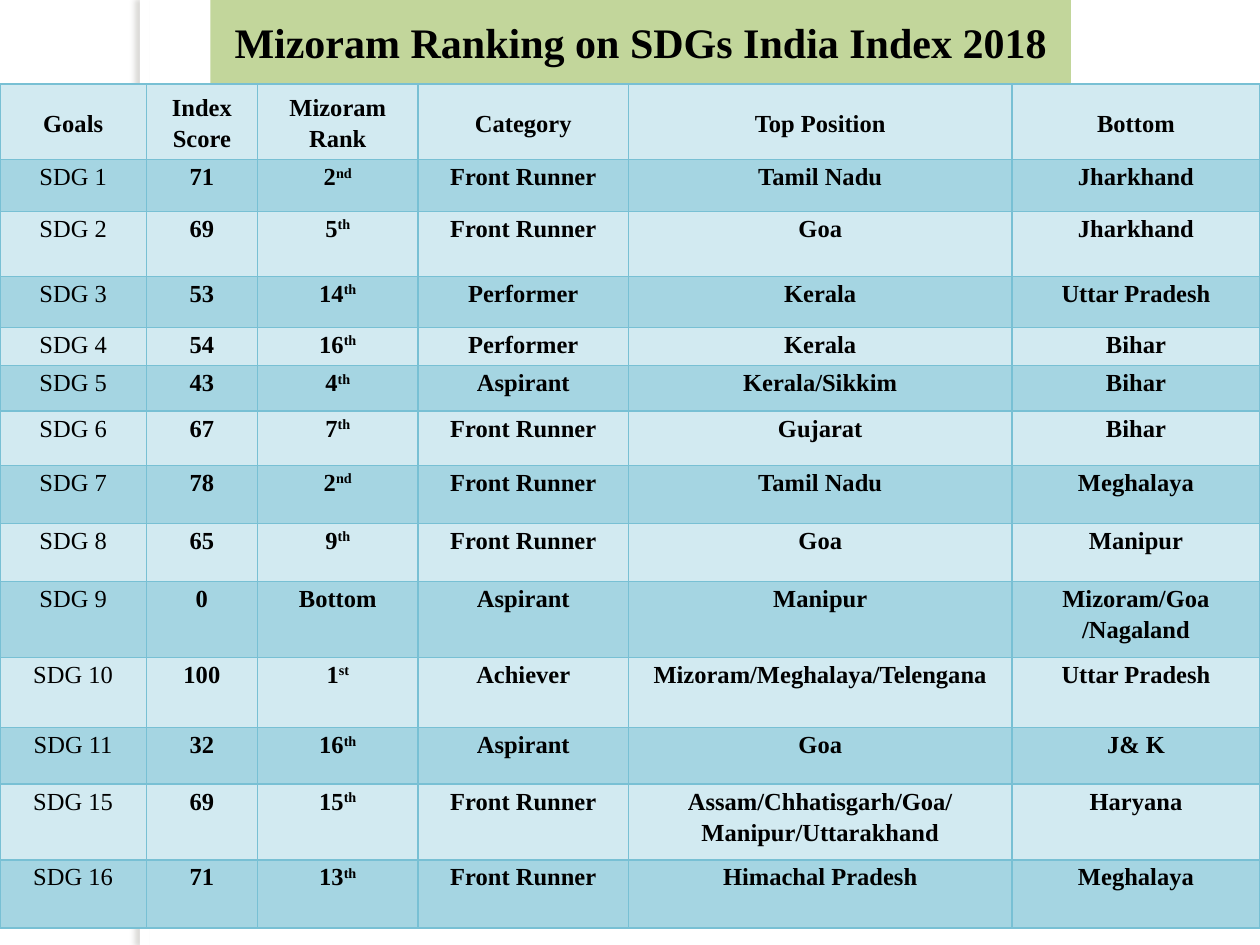
from lxml.etree import SubElement
from pptx import Presentation
from pptx.dml.color import RGBColor
from pptx.enum.shapes import MSO_SHAPE as Shape
from pptx.enum.text import MSO_ANCHOR as Anchor, MSO_AUTO_SIZE as AutoSize, PP_ALIGN as Align
from pptx.oxml import parse_xml
from pptx.oxml.ns import nsdecls, qn
from pptx.util import Cm, Pt

# Content: "^" marks the start of a superscript
TITLE = "Mizoram Ranking on SDGs India Index 2018"
HEADER = ("Goals", "Index Score", "Mizoram Rank", "Category", "Top Position", "Bottom")
GOALS = [
    ("SDG 1", "71", "2^nd", "Front Runner", "Tamil Nadu", "Jharkhand"),
    ("SDG 2", "69", "5^th", "Front Runner", "Goa", "Jharkhand"),
    ("SDG 3", "53", "14^th", "Performer", "Kerala", "Uttar Pradesh"),
    ("SDG 4", "54", "16^th", "Performer", "Kerala", "Bihar"),
    ("SDG 5", "43", "4^th", "Aspirant", "Kerala/Sikkim", "Bihar"),
    ("SDG 6", "67", "7^th", "Front Runner", "Gujarat", "Bihar"),
    ("SDG 7", "78", "2^nd", "Front Runner", "Tamil Nadu", "Meghalaya"),
    ("SDG 8", "65", "9^th", "Front Runner", "Goa", "Manipur"),
    ("SDG 9", "0", "Bottom", "Aspirant", "Manipur", "Mizoram/Goa /Nagaland"),
    ("SDG 10", "100", "1^st", "Achiever", "Mizoram/Meghalaya/Telengana", "Uttar Pradesh"),
    ("SDG 11", "32", "16^th", "Aspirant", "Goa", "J& K"),
    ("SDG 15", "69", "15^th", "Front Runner", "Assam/Chhatisgarh/Goa/Manipur/Uttarakhand", "Haryana"),
    ("SDG 16", "71", "13^th", "Front Runner", "Himachal Pradesh", "Meghalaya"),
]
ROWS = [HEADER] + GOALS

# Sizes in centimetres
COLUMN_WIDTHS = (2.95, 2.24, 3.24, 4.24, 7.73, 5.0)
ROW_HEIGHTS = (1.53, 1.04, 1.31, 1.03, 0.77, 0.92, 1.09, 1.17, 1.17, 1.53, 1.42, 1.14, 1.53, 1.37)
SIDE_MARGIN = Cm(0.18)

FONT = "Times New Roman"
BLACK = RGBColor(0x00, 0x00, 0x00)
WHITE = RGBColor(0xFF, 0xFF, 0xFF)
GREEN = RGBColor(0xC2, 0xD6, 0x9B)
BANDS = (RGBColor(0xD2, 0xEA, 0xF1), RGBColor(0xA5, 0xD5, 0xE2))
BORDER = RGBColor(0x78, 0xC0, 0xD4)
SHADOW = RGBColor(0x73, 0x6F, 0x63)


def format_span(span, size, bold=True):
    span.font.name = FONT
    span.font.size = Pt(size)
    span.font.bold = bold
    span.font.color.rgb = BLACK


def add_borders(cell):
    properties = cell._tc.get_or_add_tcPr()
    for position, side in enumerate(("lnL", "lnR", "lnT", "lnB")):
        line = parse_xml(
            f'<a:{side} {nsdecls("a")} w="{Pt(1)}"><a:solidFill>'
            f'<a:srgbClr val="{BORDER}"/></a:solidFill></a:{side}>')
        properties.insert(position, line)


def fill_cell(cell, text, row, column):
    cell.fill.solid()
    cell.fill.fore_color.rgb = BANDS[row % 2]
    add_borders(cell)
    cell.margin_left = cell.margin_right = SIDE_MARGIN
    cell.margin_top = cell.margin_bottom = 0
    cell.vertical_anchor = Anchor.MIDDLE if row == 0 else Anchor.TOP
    para = cell.text_frame.paragraphs[0]
    para.alignment = Align.CENTER
    para.line_spacing = 1.15
    base, _, suffix = text.partition("^")
    for part in filter(None, (base, suffix)):
        span = para.add_run()
        span.text = part
        format_span(span, 14, bold=row == 0 or column > 0)
    if suffix:
        span.font._element.set("baseline", "30000")


def add_strip(page):
    strip = page.shapes.add_shape(Shape.RECTANGLE, Cm(2.82), 0, Cm(0.2), Cm(19.05))
    strip.fill.solid()
    strip.fill.fore_color.rgb = WHITE
    strip.line.fill.background()
    strip.shadow.inherit = False
    effects = strip._element.spPr.find(qn("a:effectLst"))
    shadow = SubElement(effects, qn("a:outerShdw"), blurRad=str(Pt(3)), dist=str(Pt(3)),
                        dir=str(180 * 60000), algn="tl", rotWithShape="0")
    color = SubElement(shadow, qn("a:srgbClr"), val=str(SHADOW))
    SubElement(color, qn("a:alpha"), val="25000")


def add_ranking(page):
    frame = page.shapes.add_table(len(ROWS), len(HEADER), 0, Cm(1.69),
                                  Cm(sum(COLUMN_WIDTHS)), Cm(sum(ROW_HEIGHTS)))
    table = frame.table
    for column, width in zip(table.columns, COLUMN_WIDTHS):
        column.width = Cm(width)
    for row, height in zip(table.rows, ROW_HEIGHTS):
        row.height = Cm(height)
    for row, texts in enumerate(ROWS):
        for column, text in enumerate(texts):
            fill_cell(table.cell(row, column), text, row, column)


def set_title(page):
    title = page.shapes.title
    title.left, title.top, title.width, title.height = Cm(4.24), Cm(0.2), Cm(17.35), Cm(1.28)
    title.fill.solid()
    title.fill.fore_color.rgb = GREEN
    frame = title.text_frame
    frame.text = TITLE
    frame.word_wrap = False
    frame.auto_size = AutoSize.SHAPE_TO_FIT_TEXT
    frame.vertical_anchor = Anchor.MIDDLE
    para = frame.paragraphs[0]
    para.alignment = Align.CENTER
    format_span(para.runs[0], 24)


def main():
    deck = Presentation()
    deck.slide_width, deck.slide_height = Cm(25.4), Cm(19.05)
    page = deck.slides.add_slide(deck.slide_layouts[5])
    add_strip(page)
    add_ranking(page)
    set_title(page)
    deck.save("out.pptx")


if __name__ == "__main__":
    main()
